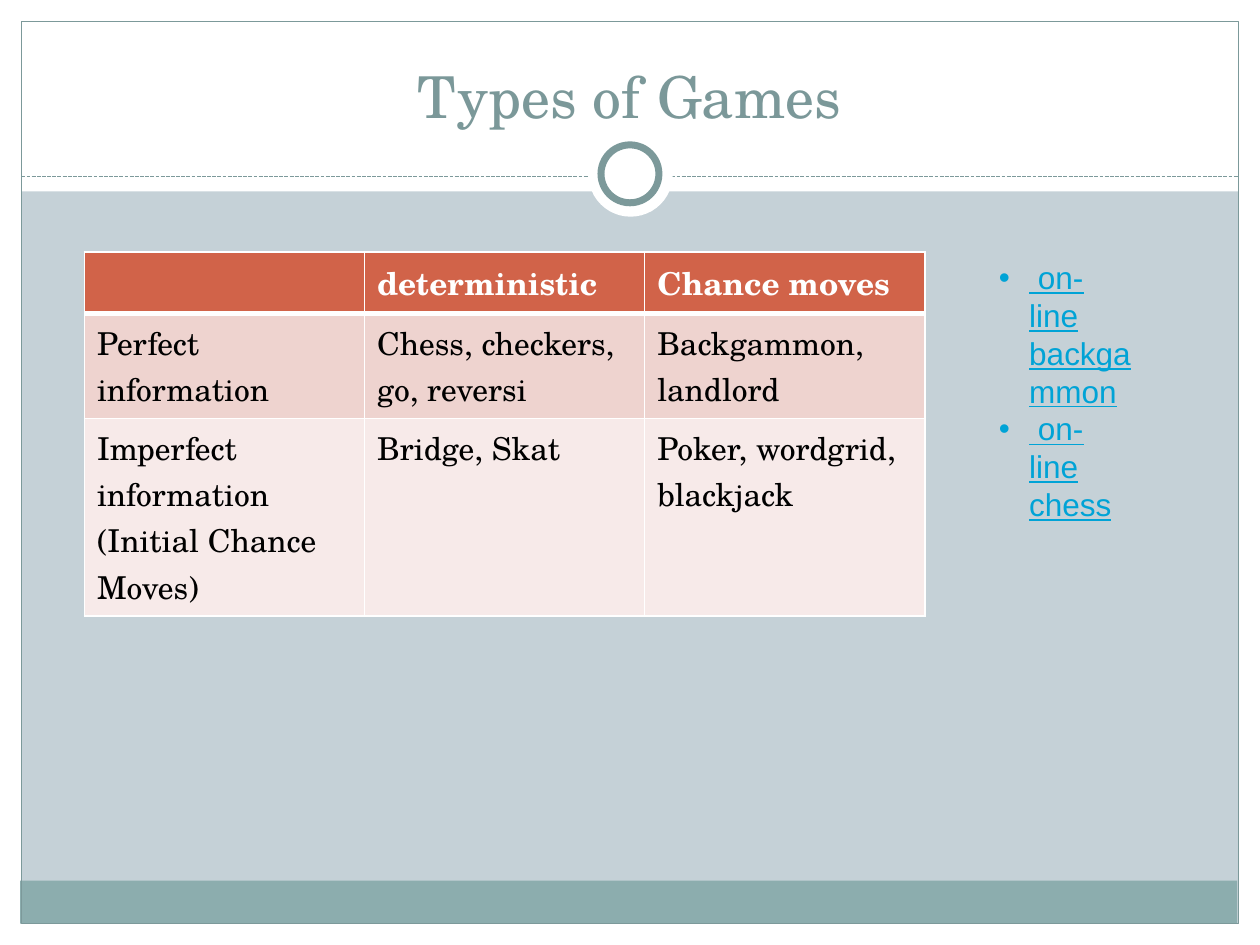
from lxml.etree import SubElement
from pptx import Presentation
from pptx.dml.color import RGBColor
from pptx.enum.dml import MSO_LINE
from pptx.enum.shapes import MSO_CONNECTOR, MSO_SHAPE
from pptx.enum.text import MSO_ANCHOR, MSO_AUTO_SIZE, PP_ALIGN
from pptx.oxml.ns import qn
from pptx.util import Inches, Pt

WHITE = RGBColor(0xFF, 0xFF, 0xFF)
BLACK = RGBColor(0x00, 0x00, 0x00)
BACKGROUND = RGBColor(0xC5, 0xD1, 0xD7)
BAND = RGBColor(0x8C, 0xAD, 0xAE)
FRAME = RGBColor(0x7C, 0x99, 0x9A)
TITLE = RGBColor(0x7B, 0x98, 0x99)
LINK = RGBColor(0x00, 0xA3, 0xD6)
ROW_FILLS = [
    RGBColor(0xD1, 0x63, 0x49),
    RGBColor(0xEE, 0xD3, 0xCF),
    RGBColor(0xF7, 0xEA, 0xE9),
]
SERIF = "TeX Gyre Schola"


def format_runs(paragraph, name, size, color, bold=False, underline=False):
    for run in paragraph.runs:
        run.font.name = name
        run.font.size = Pt(size)
        run.font.color.rgb = color
        run.font.bold = bold
        run.font.underline = underline


def add_border(cell, side, width):
    """Draw a white border on one side (L, R, T or B) of a table cell."""
    properties = cell._tc.get_or_add_tcPr()
    line = SubElement(properties, qn(f"a:ln{side}"), w=str(Pt(width)))
    fill = SubElement(line, qn("a:solidFill"))
    SubElement(fill, qn("a:srgbClr"), val=str(WHITE))


presentation = Presentation()
presentation.slide_width = Inches(10)
presentation.slide_height = Inches(7.5)
slide = presentation.slides.add_slide(presentation.slide_layouts[5])
slide.background.fill.solid()
slide.background.fill.fore_color.rgb = BACKGROUND
shapes = slide.shapes

# White margins, bottom band and frame
for left, top, width, height, fill, line in [
    (0, 7.33, 10, 0.17, WHITE, None),
    (0, 0, 10, 1.52, WHITE, None),
    (0, 0, 0.17, 7.5, WHITE, None),
    (9.83, 0, 0.17, 7.5, WHITE, None),
    (0.16, 6.99, 9.66, 0.34, BAND, None),
    (0.17, 0.17, 9.66, 7.16, None, FRAME),
]:
    shape = shapes.add_shape(
        MSO_SHAPE.RECTANGLE, Inches(left), Inches(top), Inches(width), Inches(height)
    )
    shape.shadow.inherit = False
    if fill:
        shape.fill.solid()
        shape.fill.fore_color.rgb = fill
    else:
        shape.fill.background()
    if line:
        shape.line.color.rgb = line
        shape.line.width = Pt(0.75)
    else:
        shape.line.fill.background()

# Dashed rule with a ring in the middle
rule = shapes.add_connector(
    MSO_CONNECTOR.STRAIGHT, Inches(0.17), Inches(1.4), Inches(9.83), Inches(1.4)
)
rule.line.color.rgb = FRAME
rule.line.width = Pt(0.75)
rule.line.dash_style = MSO_LINE.SQUARE_DOT
SubElement(rule._element.spPr, qn("a:effectLst"))

for left, top, diameter, ring in [(4.67, 1.05, 0.67, False), (4.77, 1.15, 0.46, True)]:
    circle = shapes.add_shape(
        MSO_SHAPE.OVAL, Inches(left), Inches(top), Inches(diameter), Inches(diameter)
    )
    circle.shadow.inherit = False
    circle.fill.solid()
    circle.fill.fore_color.rgb = WHITE
    if ring:
        circle.line.color.rgb = FRAME
        circle.line.width = Pt(4)
    else:
        circle.line.fill.background()

# Title, brought in front of the white margin
title = shapes.title
shapes._spTree.append(title._element)
title.left, title.top = Inches(0.33), Inches(0.25)
title.width, title.height = Inches(9.33), Inches(0.83)
title.text_frame.text = "Types of Games"
title.text_frame.vertical_anchor = MSO_ANCHOR.BOTTOM
title.text_frame.paragraphs[0].alignment = PP_ALIGN.CENTER
format_runs(title.text_frame.paragraphs[0], SERIF, 33, TITLE)

# Table of games
rows = [
    ["", "deterministic", "Chance moves"],
    ["Perfect information", "Chess, checkers, go, reversi", "Backgammon, landlord"],
    [
        "Imperfect information\v(Initial Chance Moves)",
        "Bridge, Skat",
        "Poker, wordgrid, blackjack",
    ],
]
table_frame = shapes.add_table(
    3, 3, Inches(0.67), Inches(2), Inches(6.67), Inches(2.41)
)
table = table_frame.table
for row in table.rows:
    row.height = Inches(0.41)
table_frame.height = Inches(2.41)
for row_index, texts in enumerate(rows):
    header = row_index == 0
    for column_index, text in enumerate(texts):
        cell = table.cell(row_index, column_index)
        cell.text = text
        format_runs(
            cell.text_frame.paragraphs[0], SERIF, 18, WHITE if header else BLACK, header
        )
        add_border(cell, "L", 1)
        add_border(cell, "R", 1)
        add_border(cell, "T", 3 if row_index == 1 else 1)
        add_border(cell, "B", 3 if header else 1)
        cell.fill.solid()
        cell.fill.fore_color.rgb = ROW_FILLS[row_index]

# List of on-line games
games_box = shapes.add_textbox(Inches(7.83), Inches(2), Inches(1.25), Inches(1.62))
text_frame = games_box.text_frame
text_frame.word_wrap = True
text_frame.auto_size = MSO_AUTO_SIZE.SHAPE_TO_FIT_TEXT
text_frame.text = " on-line backgammon\n on-line chess"
for paragraph in text_frame.paragraphs:
    format_runs(paragraph, "Arial", 18, LINK, underline=True)
    properties = paragraph._p.get_or_add_pPr()
    properties.set("marL", str(Inches(0.24)))
    properties.set("indent", str(-Inches(0.24)))
    SubElement(properties, qn("a:buFont"), typeface="Arial")
    SubElement(properties, qn("a:buChar"), char="•")

presentation.save("out.pptx")
